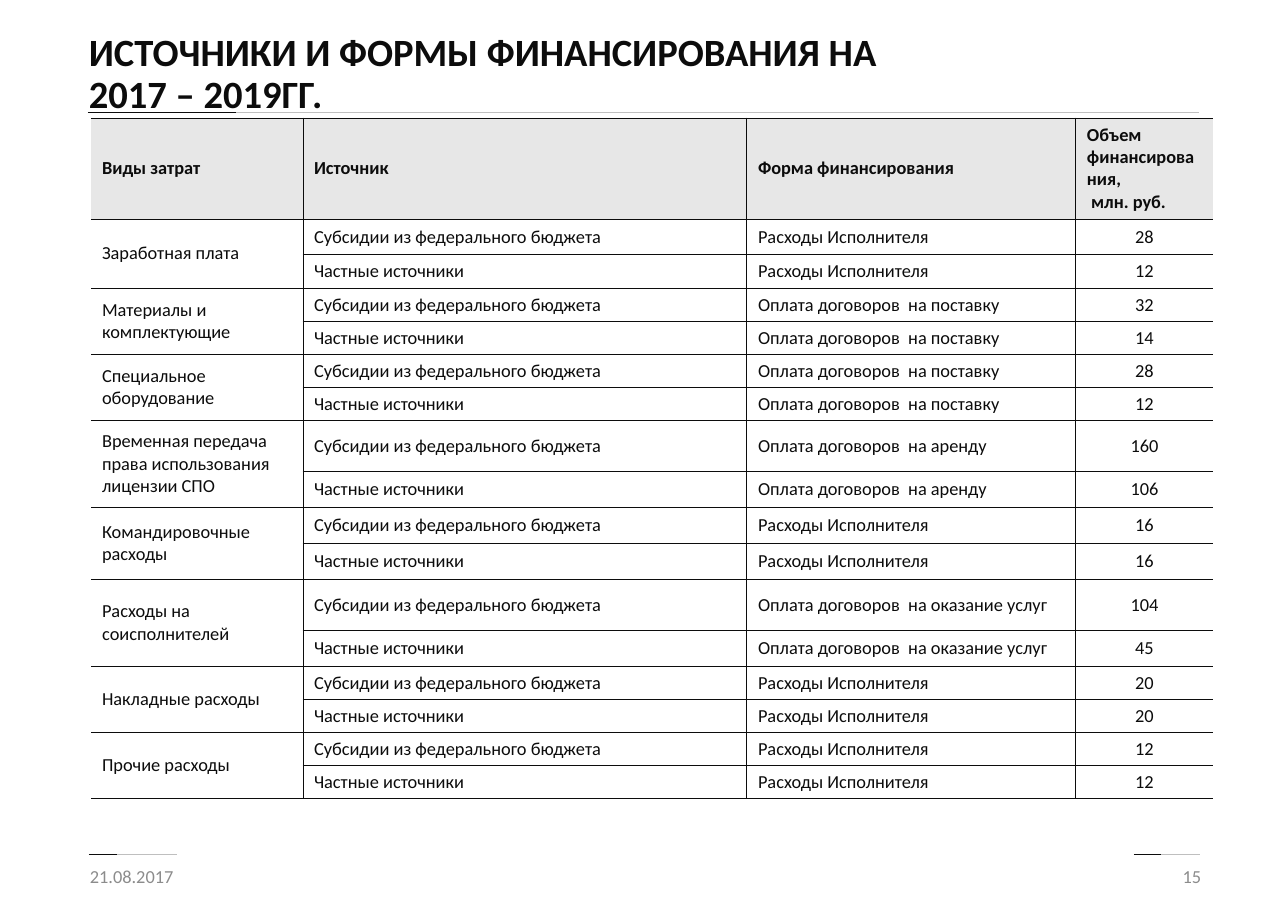
from dataclasses import dataclass

from lxml import etree
from pptx import Presentation
from pptx.dml.color import RGBColor
from pptx.enum.shapes import MSO_CONNECTOR
from pptx.enum.text import MSO_ANCHOR, PP_ALIGN
from pptx.oxml.ns import qn
from pptx.util import Emu, Pt

LEFT, CENTER, RIGHT = PP_ALIGN.LEFT, PP_ALIGN.CENTER, PP_ALIGN.RIGHT
MIDDLE = MSO_ANCHOR.MIDDLE
STRAIGHT = MSO_CONNECTOR.STRAIGHT
FONT = "Calibri"
COLORS = {"ink": "0C0C0C", "rule": "BFBFBF", "footer": "8C8C8C", "header": "E7E7E7"}
EMU_PER_PX = 8298
BORDER_WIDTH = Pt(0.75)

FEDERAL = "Субсидии из федерального бюджета"
PRIVATE = "Частные источники"
OWN = "Расходы Исполнителя"
SUPPLY = "Оплата договоров  на поставку"
RENT = "Оплата договоров  на аренду"
SERVICES = "Оплата договоров  на оказание услуг"


@dataclass
class Rule:
    left: int
    right: int
    accent_right: int
    y: int


@dataclass
class Label:
    text: str
    left: int
    top: int
    width: int
    height: int
    size: float
    color: str
    align: PP_ALIGN = LEFT
    bold: bool = False
    spacing: float = 1.0


@dataclass
class Expense:
    name: str
    form: str
    federal: int
    private: int
    heights: tuple[int, int]


RULES = [
    Rule(88, 1199, 236, 112),
    Rule(1134, 1200, 1161, 854),
    Rule(89, 177, 117, 854),
]
LABELS = [
    Label("ИСТОЧНИКИ И ФОРМЫ ФИНАНСИРОВАНИЯ НА 2017 – 2019ГГ.",
          78, 31, 878, 88, 25.2, "ink", bold=True, spacing=0.9),
    Label("21.08.2017", 79, 852, 290, 48, 12, "footer"),
    Label("15", 922, 852, 290, 48, 12, "footer", RIGHT),
]
HEADERS = ["Виды затрат", "Источник", "Форма финансирования",
           "Объем финансирования,\n млн. руб."]
COLUMN_WIDTHS = [212, 444, 329, 137]
HEADER_HEIGHT = 101
TABLE_LEFT, TABLE_TOP = 91, 118
EXPENSES = [
    Expense("Заработная плата", OWN, 28, 12, (36, 33)),
    Expense("Материалы и комплектующие", SUPPLY, 32, 14, (33, 33)),
    Expense("Специальное оборудование", SUPPLY, 28, 12, (33, 33)),
    Expense("Временная передача права использования лицензии СПО",
            RENT, 160, 106, (51, 36)),
    Expense("Командировочные расходы", OWN, 16, 16, (36, 36)),
    Expense("Расходы на  соисполнителей", SERVICES, 104, 45, (51, 36)),
    Expense("Накладные расходы", OWN, 20, 20, (33, 33)),
    Expense("Прочие расходы", OWN, 12, 12, (33, 33)),
]


def px(value: int) -> Emu:
    return Emu(value * EMU_PER_PX)


def rgb(name: str) -> RGBColor:
    return RGBColor.from_string(COLORS[name])


def write_text(tf, text: str, size: float, color: str, align: PP_ALIGN = LEFT,
               bold: bool = False, spacing: float = 1.0) -> None:
    tf.text = text
    for p in tf.paragraphs:
        p.alignment = align
        p.line_spacing = spacing
        for r in p.runs:
            r.font.name = FONT
            r.font.size = Pt(size)
            r.font.bold = bold
            r.font.color.rgb = rgb(color)


def draw_line(s, left: int, right: int, y: int, color: str) -> None:
    line = s.shapes.add_connector(STRAIGHT, px(left), px(y), px(right), px(y))
    line.line.color.rgb = rgb(color)
    line.line.width = Pt(0.5)
    etree.SubElement(line._element.spPr, qn("a:effectLst"))


def draw_rule(s, rule: Rule) -> None:
    draw_line(s, rule.left, rule.right, rule.y, "rule")
    draw_line(s, rule.left, rule.accent_right, rule.y, "ink")


def draw_label(s, label: Label) -> None:
    sp = s.shapes.add_textbox(px(label.left), px(label.top),
                              px(label.width), px(label.height))
    tf = sp.text_frame
    tf.word_wrap = True
    tf.vertical_anchor = MIDDLE
    write_text(tf, label.text, label.size, label.color, label.align,
               label.bold, label.spacing)


def set_borders(cell, sides: dict[str, bool]) -> None:
    tc_pr = cell._tc.get_or_add_tcPr()
    for side, visible in sides.items():
        ln = etree.SubElement(tc_pr, qn(f"a:ln{side}"), w=str(BORDER_WIDTH))
        if visible:
            fill = etree.SubElement(ln, qn("a:solidFill"))
            etree.SubElement(fill, qn("a:srgbClr"), val=COLORS["ink"])
        else:
            etree.SubElement(ln, qn("a:noFill"))


def draw_table(s, expenses: list[Expense]) -> None:
    rows = [HEADERS]
    heights = [HEADER_HEIGHT]
    for e in expenses:
        rows.append([e.name, FEDERAL, e.form, str(e.federal)])
        rows.append(["", PRIVATE, e.form, str(e.private)])
        heights.extend(e.heights)

    last = len(COLUMN_WIDTHS) - 1
    table = s.shapes.add_table(len(rows), len(COLUMN_WIDTHS), px(TABLE_LEFT),
                               px(TABLE_TOP), px(sum(COLUMN_WIDTHS)),
                               px(sum(heights))).table
    table.first_row = False
    table.horz_banding = False
    for column, width in zip(table.columns, COLUMN_WIDTHS):
        column.width = px(width)
    for i, (texts, height) in enumerate(zip(rows, heights)):
        table.rows[i].height = px(height)
        is_header = i == 0
        for j, text in enumerate(texts):
            cell = table.cell(i, j)
            cell.vertical_anchor = MIDDLE
            set_borders(cell, {"L": j > 0, "R": j < last, "T": True, "B": True})
            if is_header:
                cell.fill.solid()
                cell.fill.fore_color.rgb = rgb("header")
            else:
                cell.fill.background()
            align = CENTER if j == last and not is_header else LEFT
            write_text(cell.text_frame, text, 12, "ink", align, is_header)
    for i in range(1, len(rows), 2):
        table.cell(i, 0).merge(table.cell(i + 1, 0))


def main() -> None:
    prs = Presentation()
    prs.slide_width, prs.slide_height = px(1288), px(911)
    s = prs.slides.add_slide(prs.slide_layouts[6])
    for rule in RULES:
        draw_rule(s, rule)
    for label in LABELS:
        draw_label(s, label)
    draw_table(s, EXPENSES)
    prs.save("out.pptx")


if __name__ == "__main__":
    main()
